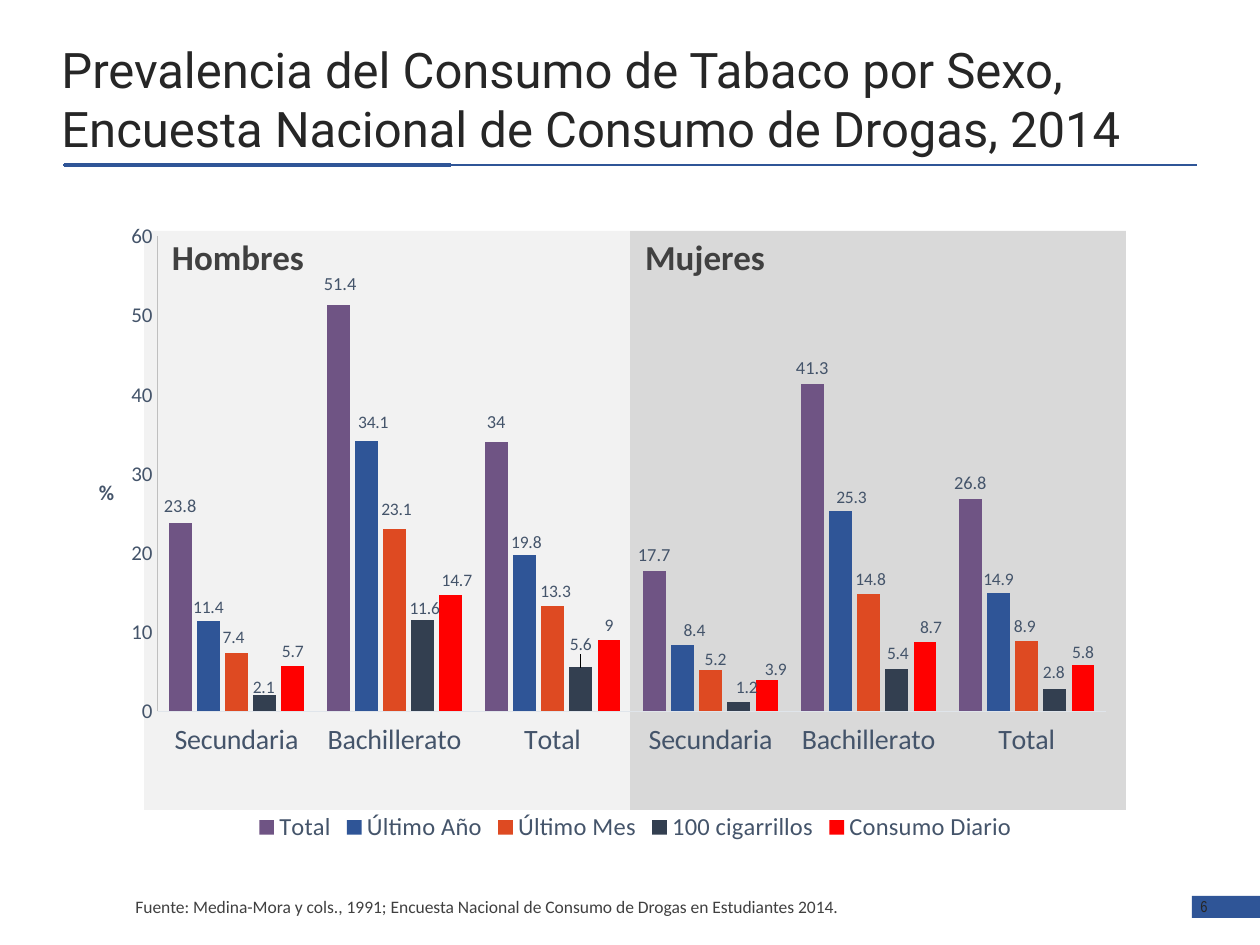
from dataclasses import dataclass

import pptx
import pptx.chart.data
import pptx.dml.color
import pptx.enum.chart
import pptx.enum.shapes
import pptx.enum.text
import pptx.oxml.ns
import pptx.oxml.xmlchemy
import pptx.util

PX = pptx.util.Inches(1) / 126
qn = pptx.oxml.ns.qn
new_element = pptx.oxml.xmlchemy.OxmlElement
ALIGN = pptx.enum.text.PP_ALIGN
ANCHOR = pptx.enum.text.MSO_ANCHOR


@dataclass(frozen=True)
class Theme:
    blue: str = "2F5597"
    ink: str = "262626"
    grey: str = "404040"
    slate: str = "44546A"
    men: str = "F2F2F2"
    women: str = "D9D9D9"
    cat_line: str = "E0E5EB"
    val_line: str = "BFBFBF"
    purple: str = "6F5484"
    orange: str = "DE4A22"
    navy: str = "333F50"
    red: str = "FF0000"
    black: str = "000000"
    heading: str = "Roboto"
    body: str = "Calibri"
    number: str = "Arial Narrow"
    title_pt: float = 28
    group_pt: float = 20
    cat_pt: float = 16
    legend_pt: float = 14
    axis_pt: float = 12
    total_pt: float = 10.5
    label_pt: float = 10
    number_pt: float = 9


T = Theme()


@dataclass(frozen=True)
class Box:
    x: int
    y: int
    w: int
    h: int

    def emu(self) -> list[int]:
        return [px(v) for v in (self.x, self.y, self.w, self.h)]


@dataclass(frozen=True)
class Rule:
    x1: int
    x2: int
    y: int
    width: float


@dataclass(frozen=True)
class Panel:
    box: Box
    color: str


@dataclass(frozen=True)
class Text:
    box: Box
    lines: tuple[str, ...]
    font: str
    size: float
    color: str
    bold: bool = False
    align: ALIGN = ALIGN.LEFT
    anchor: ANCHOR = ANCHOR.TOP
    wrap: bool = True


@dataclass(frozen=True)
class Series:
    name: str
    color: str
    values: tuple[float, ...]
    shifts: tuple[tuple[int, int], ...]
    size: float = T.label_pt


CHART = Box(95, 224, 1042, 625)
RULES = [Rule(63, 1197, 165, 1), Rule(64, 451, 165, 2.25)]
PANELS = [
    Panel(Box(1192, 896, 68, 22), T.blue),
    Panel(Box(630, 231, 496, 579), T.women),
    Panel(Box(144, 231, 486, 579), T.men),
]
TEXTS = [
    Text(Box(49, 39, 1206, 118),
         ("Prevalencia del Consumo de Tabaco por Sexo,",
          "Encuesta Nacional de Consumo de Drogas, 2014"),
         T.heading, T.title_pt, T.ink, anchor=ANCHOR.MIDDLE),
    Text(Box(154, 229, 168, 55), ("Hombres",), T.body, T.group_pt, T.grey, True, ALIGN.CENTER),
    Text(Box(621, 229, 168, 55), ("Mujeres",), T.body, T.group_pt, T.grey, True, ALIGN.CENTER),
    Text(Box(123, 890, 740, 34),
         ("Fuente: Medina-Mora y cols., 1991; Encuesta Nacional de Consumo de Drogas "
          "en Estudiantes 2014.",),
         T.body, T.label_pt, T.grey, wrap=False),
    Text(Box(1188, 891, 49, 32), ("6",), T.number, T.number_pt, T.ink, wrap=False),
]
CATEGORIES = ("Secundaria", "Bachillerato", "Total") * 2
SERIES = [
    Series("Total", T.purple, (23.8, 51.4, 34, 17.7, 41.3, 26.8),
           ((0, 0), (2, -4), (0, -4), (0, 0), (0, 0), (0, 0)), T.total_pt),
    Series("Último Año", T.blue, (11.4, 34.1, 19.8, 8.4, 25.3, 14.9),
           ((0, 1), (7, -4), (2, 3), (12, 0), (11, 1), (0, 1))),
    Series("Último Mes", T.orange, (7.4, 23.1, 13.3, 5.2, 14.8, 8.9),
           ((-3, 0), (2, -4), (3, 0), (5, 4), (2, 0), (-2, 0))),
    Series("100 cigarrillos", T.navy, (2.1, 11.6, 5.6, 1.2, 5.4, 2.8),
           ((-1, 8), (2, 4), (0, -8), (8, 1), (1, 0), (-1, -2))),
    Series("Consumo Diario", T.red, (5.7, 14.7, 9, 3.9, 8.7, 5.8),
           ((0, 0), (6, 0), (0, 0), (9, 4), (6, 0), (0, 2))),
]


def px(v: float) -> int:
    return round(v * PX)


def rgb(color: str) -> pptx.dml.color.RGBColor:
    return pptx.dml.color.RGBColor.from_string(color)


def style(font, name: str, size: float, color: str, bold: bool = False) -> None:
    font.name, font.size, font.bold = name, pptx.util.Pt(size), bold
    font.color.rgb = rgb(color)


def draw_rule(s, rule: Rule) -> None:
    c = s.shapes.add_connector(pptx.enum.shapes.MSO_CONNECTOR.STRAIGHT,
                               px(rule.x1), px(rule.y), px(rule.x2), px(rule.y))
    c.line.color.rgb = rgb(T.blue)
    c.line.width = pptx.util.Pt(rule.width)
    c._element.spPr.append(new_element("a:effectLst"))


def draw_panel(s, panel: Panel) -> None:
    sp = s.shapes.add_shape(pptx.enum.shapes.MSO_SHAPE.RECTANGLE, *panel.box.emu())
    sp.shadow.inherit = False
    sp.fill.solid()
    sp.fill.fore_color.rgb = rgb(panel.color)
    sp.line.fill.background()


def draw_text(s, text: Text) -> None:
    tf = s.shapes.add_textbox(*text.box.emu()).text_frame
    tf.word_wrap, tf.vertical_anchor = text.wrap, text.anchor
    p = tf.paragraphs[0]
    p.alignment = text.align
    for i, line in enumerate(text.lines):
        if i:
            p.add_line_break()
        r = p.add_run()
        r.text = line
        style(r.font, text.font, text.size, text.color, text.bold)


def set_layout(parent, index: int, **values) -> None:
    for old in parent.findall(qn("c:layout")):
        parent.remove(old)
    layout, manual = new_element("c:layout"), new_element("c:manualLayout")
    layout.append(manual)
    for tag, value in values.items():
        el = new_element(f"c:{tag}")
        el.set("val", str(value))
        manual.append(el)
    parent.insert(index, layout)


def style_axis(axis, size: float, line: str) -> None:
    axis.has_major_gridlines = False
    axis.major_tick_mark = axis.minor_tick_mark = pptx.enum.chart.XL_TICK_MARK.NONE
    style(axis.tick_labels.font, T.body, size, T.slate)
    axis.format.line.color.rgb = rgb(line)
    axis.format.line.width = pptx.util.Pt(0.75)


def style_series(ser, spec: Series) -> None:
    ser.format.fill.solid()
    ser.format.fill.fore_color.rgb = rgb(spec.color)
    ser.invert_if_negative = False
    labels = ser.data_labels
    labels.show_value = True
    labels.position = outside = pptx.enum.chart.XL_LABEL_POSITION.OUTSIDE_END
    style(labels.font, T.body, spec.size, T.slate)
    for i, (dx, dy) in enumerate(spec.shifts):
        if dx or dy:
            label = ser.points[i].data_label
            style(label.font, T.body, spec.size, T.slate)
            label.position = outside
            set_layout(label._get_or_add_dLbl(), 1,
                       x=round(dx / CHART.w, 4), y=round(dy / CHART.h, 4))


def draw_chart(s) -> None:
    data = pptx.chart.data.CategoryChartData()
    data.categories = CATEGORIES
    for spec in SERIES:
        data.add_series(spec.name, spec.values)
    chart = s.shapes.add_chart(pptx.enum.chart.XL_CHART_TYPE.COLUMN_CLUSTERED,
                               *CHART.emu(), data).chart
    chart.has_title = False
    style(chart.font, T.body, T.label_pt, T.black)
    plot = chart.plots[0]
    plot.gap_width, plot.overlap, plot.vary_by_categories = 100, -24, False
    edge = {"xMode": "edge", "yMode": "edge"}
    set_layout(plot._element.getparent(), 0, layoutTarget="inner", **edge,
               x=0.06, y=0.02, w=0.91, h=0.76)
    for ser, spec in zip(plot.series, SERIES):
        style_series(ser, spec)
    cat, val = chart.category_axis, chart.value_axis
    style_axis(cat, T.cat_pt, T.cat_line)
    cat.tick_label_position = pptx.enum.chart.XL_TICK_LABEL_POSITION.LOW
    style_axis(val, T.axis_pt, T.val_line)
    val.minimum_scale, val.maximum_scale, val.major_unit = 0, 60, 10
    val.tick_labels.number_format = "0"
    val.tick_labels.number_format_is_linked = False
    title = val.axis_title
    r = title.text_frame.paragraphs[0].add_run()
    r.text = "%"
    style(r.font, T.body, T.axis_pt, T.slate, True)
    title._element.find(".//" + qn("a:bodyPr")).set("rot", "0")
    set_layout(title._element, 1, **edge, x=0, y=0.4)
    chart.has_legend = True
    chart.legend.position = pptx.enum.chart.XL_LEGEND_POSITION.BOTTOM
    chart.legend.include_in_layout = False
    style(chart.legend.font, T.body, T.legend_pt, T.slate)
    set_layout(chart.legend._element, 1, **edge, x=0.15, y=0.94)


def main() -> None:
    prs = pptx.Presentation()
    prs.slide_width, prs.slide_height = px(1260), px(945)
    s = prs.slides.add_slide(prs.slide_layouts[6])
    for draw, items in ((draw_rule, RULES), (draw_panel, PANELS)):
        for item in items:
            draw(s, item)
    draw_chart(s)
    for text in TEXTS:
        draw_text(s, text)
    prs.save("out.pptx")


if __name__ == "__main__":
    main()
